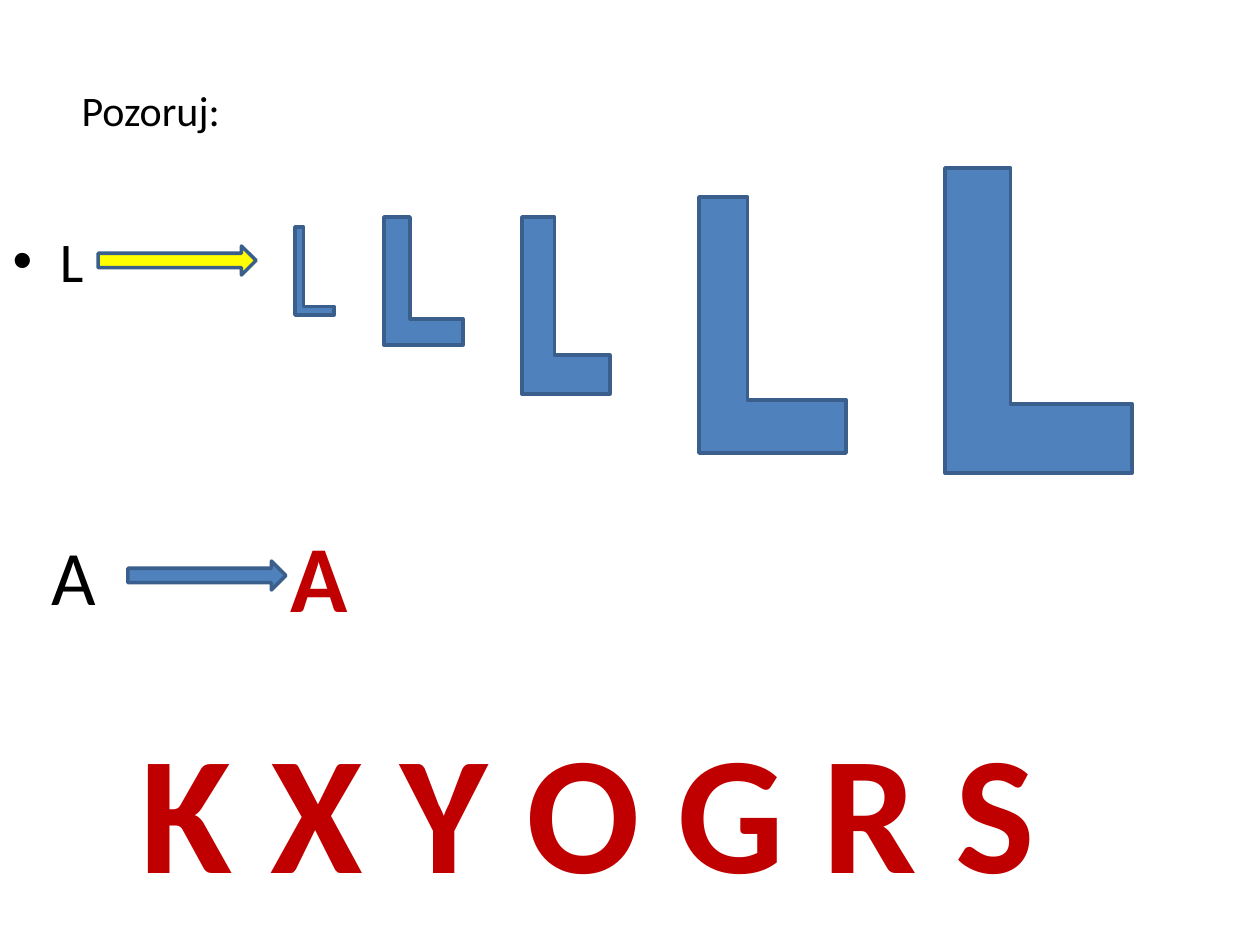
"""Build the letter-observation slide with growing L shapes and red capitals."""
from pptx import Presentation
from pptx import util as u
from pptx.dml.color import RGBColor
from pptx.enum import shapes, text

PX = u.Inches(1) / 126
COLORS = {"ink": "000000", "blue": "4F81BD", "edge": "3A5F8C", "yellow": "FFFF00", "red": "C00000"}


def px(*lengths):
    return [u.Emu(round(length * PX)) for length in lengths]


def write(holder, box, wording, size, color, align=text.PP_ALIGN.LEFT, bold=False):
    holder.left, holder.top, holder.width, holder.height = px(*box)
    frame = holder.text_frame
    frame.text = wording
    frame.word_wrap = True
    frame.vertical_anchor = text.MSO_ANCHOR.TOP
    frame.paragraphs[0].alignment = align
    font = frame.paragraphs[0].runs[0].font
    font.name, font.size, font.bold = "Calibri", u.Pt(size), bold
    font.color.rgb = RGBColor.from_string(COLORS[color])


deck = Presentation()
deck.slide_width, deck.slide_height = px(1260, 945)
slide = deck.slides.add_slide(deck.slide_layouts[1])

write(slide.shapes.title, (69, 78, 266, 63), "Pozoruj:", 24, "ink")
write(slide.placeholders[1], (0, 220, 1134, 624), "L", 32, "ink")

letters = [
    ((39, 522, 121, 106), "A", 44, "ink", text.PP_ALIGN.LEFT, False),
    ((186, 512, 266, 127), "A", 54, "red", text.PP_ALIGN.CENTER, True),
    ((108, 699, 960, 217), "K X Y O G R S", 96, "red", text.PP_ALIGN.CENTER, True),
]
for box, wording, size, color, align, bold in letters:
    write(slide.shapes.add_textbox(*px(*box)), box, wording, size, color, align, bold)

corner, arrow = shapes.MSO_SHAPE.CORNER, shapes.MSO_SHAPE.RIGHT_ARROW
figures = [
    (corner, (295, 227, 39, 88), "blue", (0.22, 0.22)),
    (corner, (384, 217, 79, 128), "blue", (0.33, 0.33)),
    (corner, (522, 217, 88, 177), "blue", (0.44, 0.37)),
    (corner, (699, 197, 147, 256), "blue", (0.36, 0.33)),
    (corner, (945, 168, 187, 305), "blue", (0.37, 0.35)),
    (arrow, (98, 246, 158, 29), "yellow", ()),
    (arrow, (128, 561, 158, 29), "blue", ()),
]
for kind, box, color, thicknesses in figures:
    figure = slide.shapes.add_shape(kind, *px(*box))
    figure.shadow.inherit = False
    figure.fill.solid()
    figure.fill.fore_color.rgb = RGBColor.from_string(COLORS[color])
    figure.line.color.rgb = RGBColor.from_string(COLORS["edge"])
    figure.line.width = u.Pt(2)
    for index, thickness in enumerate(thicknesses):
        figure.adjustments[index] = thickness

deck.save("out.pptx")
